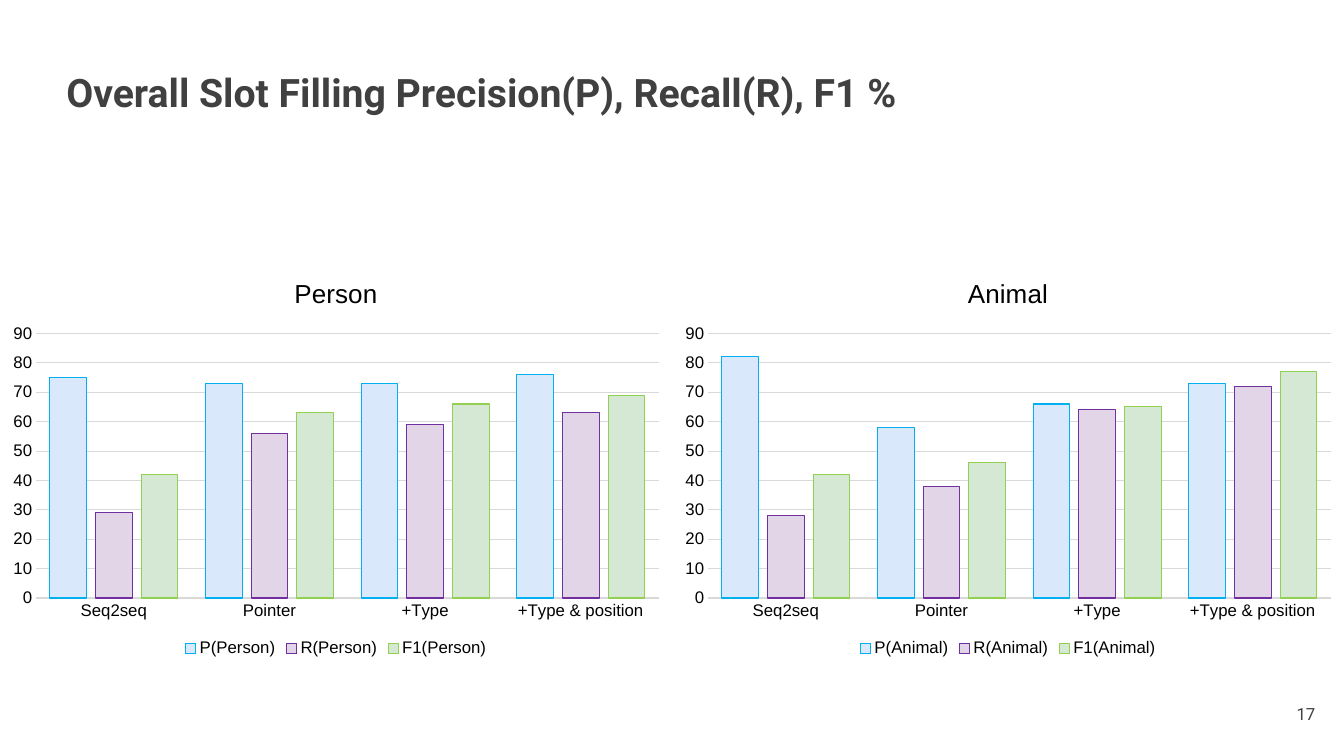
from pptx import Presentation
from pptx.chart.data import CategoryChartData
from pptx.dml.color import RGBColor
from pptx.enum.chart import XL_CHART_TYPE, XL_LEGEND_POSITION, XL_TICK_MARK
from pptx.enum.text import MSO_ANCHOR, PP_ALIGN
from pptx.util import Cm, Pt

# Content
TITLE = "Overall Slot Filling Precision(P), Recall(R), F1 %"
NUMBER = "17"
MODELS = ["Seq2seq", "Pointer", "+Type", "+Type & position"]
SCORES = {
    "Person": {"P": (75, 73, 73, 76), "R": (29, 56, 59, 63), "F1": (42, 63, 66, 69)},
    "Animal": {"P": (82, 58, 66, 73), "R": (28, 38, 64, 72), "F1": (42, 46, 65, 77)},
}

# Colours
BLACK = RGBColor(0x00, 0x00, 0x00)
DARK = RGBColor(0x40, 0x40, 0x40)
GREY = RGBColor(0xD9, 0xD9, 0xD9)
BARS = [  # fill and outline of each measure
    (RGBColor(0xDA, 0xE8, 0xFC), RGBColor(0x00, 0xB0, 0xF0)),
    (RGBColor(0xE1, 0xD5, 0xE7), RGBColor(0x70, 0x30, 0xA0)),
    (RGBColor(0xD5, 0xE8, 0xD4), RGBColor(0x92, 0xD0, 0x50)),
]

# Layout
WIDTH, HEIGHT = Cm(33.87), Cm(19.05)
TOP, TALL = Cm(6.5), Cm(10.16)
HALF = WIDTH // len(SCORES)


def style(font, size, color=BLACK, name="Arial", bold=False):
    font.size, font.name, font.bold = Pt(size), name, bold
    font.color.rgb = color


def outline(line, color):
    line.color.rgb = color
    line.width = Pt(0.75)


def add_bars(slide, left, topic, scores):
    data = CategoryChartData()
    data.categories = MODELS
    for label, values in scores.items():
        data.add_series(f"{label}({topic})", values)
    chart = slide.shapes.add_chart(
        XL_CHART_TYPE.COLUMN_CLUSTERED, left, TOP, HALF, TALL, data).chart
    style(chart.font, 10)

    # Chart title and legend
    frame = chart.chart_title.text_frame
    frame.text = topic
    style(frame.paragraphs[0].runs[0].font, 18.6)
    chart.has_legend = True
    chart.legend.position = XL_LEGEND_POSITION.BOTTOM
    chart.legend.include_in_layout = False
    style(chart.legend.font, 12)

    # Axes
    rows, cols = chart.value_axis, chart.category_axis
    for axis in (rows, cols):
        axis.major_tick_mark = axis.minor_tick_mark = XL_TICK_MARK.NONE
        style(axis.tick_labels.font, 12)
    outline(cols.format.line, GREY)
    rows.format.line.fill.background()
    outline(rows.major_gridlines.format.line, GREY)
    rows.minimum_scale, rows.maximum_scale, rows.major_unit = 0, 90, 10

    # Bars
    plot = chart.plots[0]
    plot.vary_by_categories = False
    plot.gap_width, plot.overlap = 75, -25
    for series, (fill, edge) in zip(plot.series, BARS):
        series.format.fill.solid()
        series.format.fill.fore_color.rgb = fill
        outline(series.format.line, edge)


deck = Presentation()
deck.slide_width, deck.slide_height = WIDTH, HEIGHT
slide = deck.slides.add_slide(deck.slide_layouts[5])

# Title
title = slide.shapes.title
title.left, title.top, title.width, title.height = Cm(1.42), Cm(1.47), Cm(32.44), Cm(1.6)
frame = title.text_frame
frame.text = TITLE
frame.vertical_anchor = MSO_ANCHOR.TOP
frame.margin_left = frame.margin_right = frame.margin_top = frame.margin_bottom = Cm(0.25)
frame.paragraphs[0].alignment = PP_ALIGN.LEFT
style(frame.paragraphs[0].runs[0].font, 28, DARK, "Roboto", True)

# Charts side by side
for spot, (topic, scores) in enumerate(SCORES.items()):
    add_bars(slide, spot * HALF, topic, scores)

# Page number
frame = slide.shapes.add_textbox(Cm(31.37), Cm(17.27), Cm(2.03), Cm(1.45)).text_frame
frame.word_wrap = True
frame.text = NUMBER
frame.vertical_anchor = MSO_ANCHOR.MIDDLE
frame.paragraphs[0].alignment = PP_ALIGN.RIGHT
style(frame.paragraphs[0].runs[0].font, 12, DARK, "Roboto")

deck.save("out.pptx")
